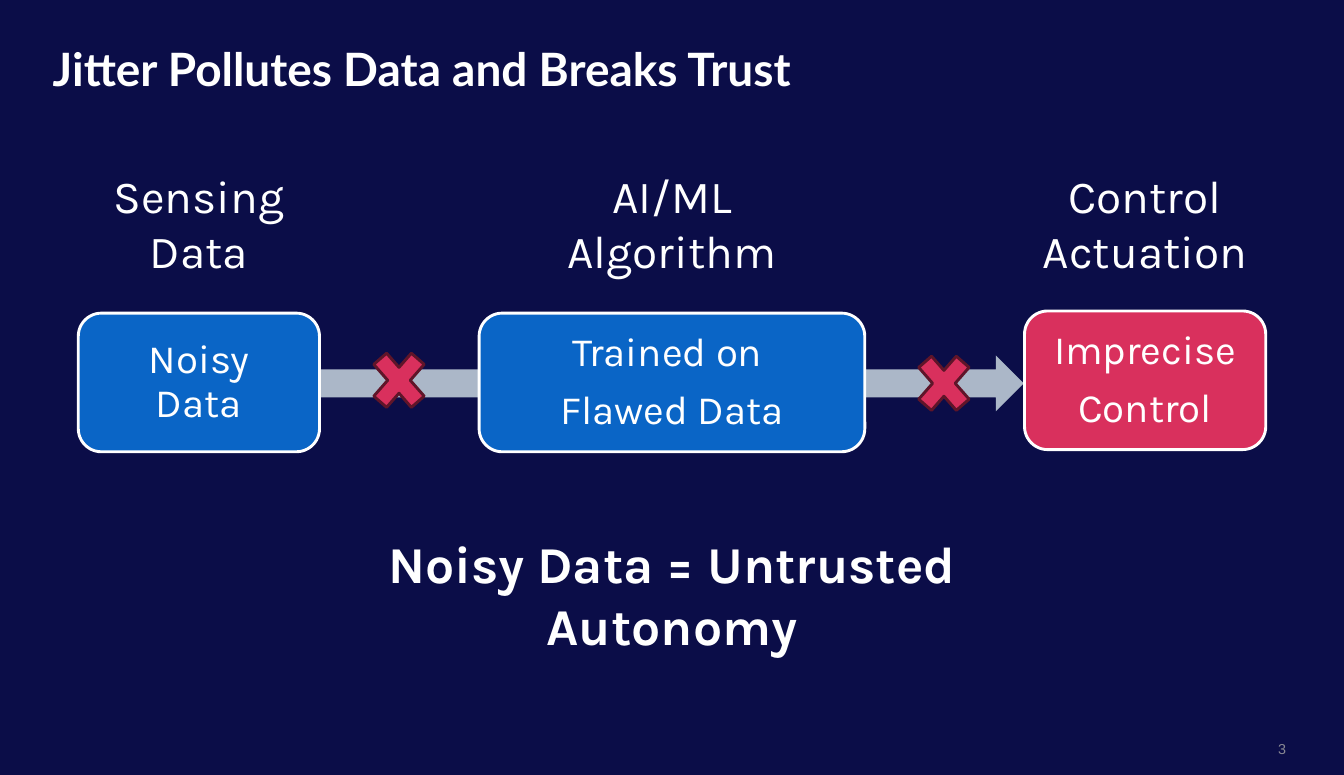
from pptx import Presentation
from pptx.dml.color import RGBColor
from pptx.enum.shapes import MSO_SHAPE as Kind
from pptx.enum.text import MSO_ANCHOR as Anchor, MSO_AUTO_SIZE as Fit, PP_ALIGN as Align
from pptx.util import Pt

THEME = {
    "back": "0B0D48", "white": "FFFFFF", "blue": "0A65C6", "red": "D9305D",
    "rim": "5F1529", "arrow": "ABB7C8", "gray": "888893",
    "head": 32, "label": 32, "box": 28, "claim": 36, "page": 10,
    "body": "Karla", "title": "Lato", "plain": "Arial",
}
TITLE = "Jitter Pollutes Data and Breaks Trust"
CLAIM = "Noisy Data = Untrusted Autonomy"
PAGE = "3"
STEPS = [
    ("Sensing\nData", "Noisy Data", "blue", 168, 218.2),
    ("AI/ML\nAlgorithm", "Trained on \nFlawed Data", "blue", 268.6, 218.2),
    ("Control\nActuation", "Imprecise\nControl", "red", 168, 216.7),
]
CROSSES = [(277.9, 265), (657.4, 267.1)]
WIDE, HIGH = 936, 540
FIRST, STEP = 138.5, 329.5
BOX_H, LABEL_W, PAD = 96.6, 201, 13
CROSS_W, CROSS_H = 50.4, 57.6


def color(name):
    return RGBColor.from_string(THEME[name])


def write(frame, text, size, font="body", tint="white", bold=False, align=Align.CENTER):
    frame.text = text
    frame.word_wrap = True
    for para in frame.paragraphs:
        para.alignment = align
        for run in para.runs:
            run.font.name = THEME[font]
            run.font.size = Pt(THEME[size])
            run.font.color.rgb = color(tint)
            run.font.bold = bold


def inset(frame, pad):
    frame.margin_left = frame.margin_right = Pt(pad)
    frame.margin_top = frame.margin_bottom = Pt(pad)


def draw(slide, kind, area, fill, line=None):
    shape = slide.shapes.add_shape(kind, *map(Pt, area))
    shape.shadow.inherit = False
    shape.fill.solid()
    shape.fill.fore_color.rgb = color(fill)
    if line:
        shape.line.color.rgb = color(line)
        shape.line.width = Pt(2)
    else:
        shape.line.fill.background()
    return shape


def note(slide, area, text, size, **style):
    frame = slide.shapes.add_textbox(*map(Pt, area)).text_frame
    write(frame, text, size, **style)
    return frame


def main():
    deck = Presentation()
    deck.slide_width, deck.slide_height = Pt(WIDE), Pt(HIGH)
    slide = deck.slides.add_slide(deck.slide_layouts[5])
    slide.background.fill.solid()
    slide.background.fill.fore_color.rgb = color("back")

    title = slide.shapes.title
    title.left, title.top, title.width, title.height = map(Pt, (36.7, 28, 862.6, 41))
    frame = title.text_frame
    write(frame, TITLE, "head", font="title", bold=True, align=Align.LEFT)
    inset(frame, 0)
    frame.vertical_anchor = Anchor.TOP
    frame.auto_size = Fit.NONE

    draw(slide, Kind.RIGHT_ARROW, (198, 247.7, 515, 38.9), "arrow")
    for i, (label, text, fill, width, top) in enumerate(STEPS):
        mid = FIRST + i * STEP
        area = (mid - LABEL_W / 2, 113, LABEL_W, 85)
        note(slide, area, label, "label").auto_size = Fit.SHAPE_TO_FIT_TEXT
        area = (mid - width / 2, top, width, BOX_H)
        frame = draw(slide, Kind.ROUNDED_RECTANGLE, area, fill, "white").text_frame
        write(frame, text, "box")
        inset(frame, PAD)
        frame.vertical_anchor = Anchor.MIDDLE
        for para in frame.paragraphs:
            para.line_spacing = 0.9
            para.space_after = Pt(10)

    for x, y in CROSSES:
        area = (x - CROSS_W / 2, y - CROSS_H / 2, CROSS_W, CROSS_H)
        draw(slide, Kind.MATH_MULTIPLY, area, "red", "rim")

    claim = note(slide, (186.5, 367.2, 563, 51), CLAIM, "claim", bold=True)
    claim.auto_size = Fit.SHAPE_TO_FIT_TEXT
    page = note(slide, (692.6, 507.6, 210.2, 28.8), PAGE, "page",
                font="plain", tint="gray", align=Align.RIGHT)
    page.vertical_anchor = Anchor.MIDDLE
    deck.save("out.pptx")


if __name__ == "__main__":
    main()
